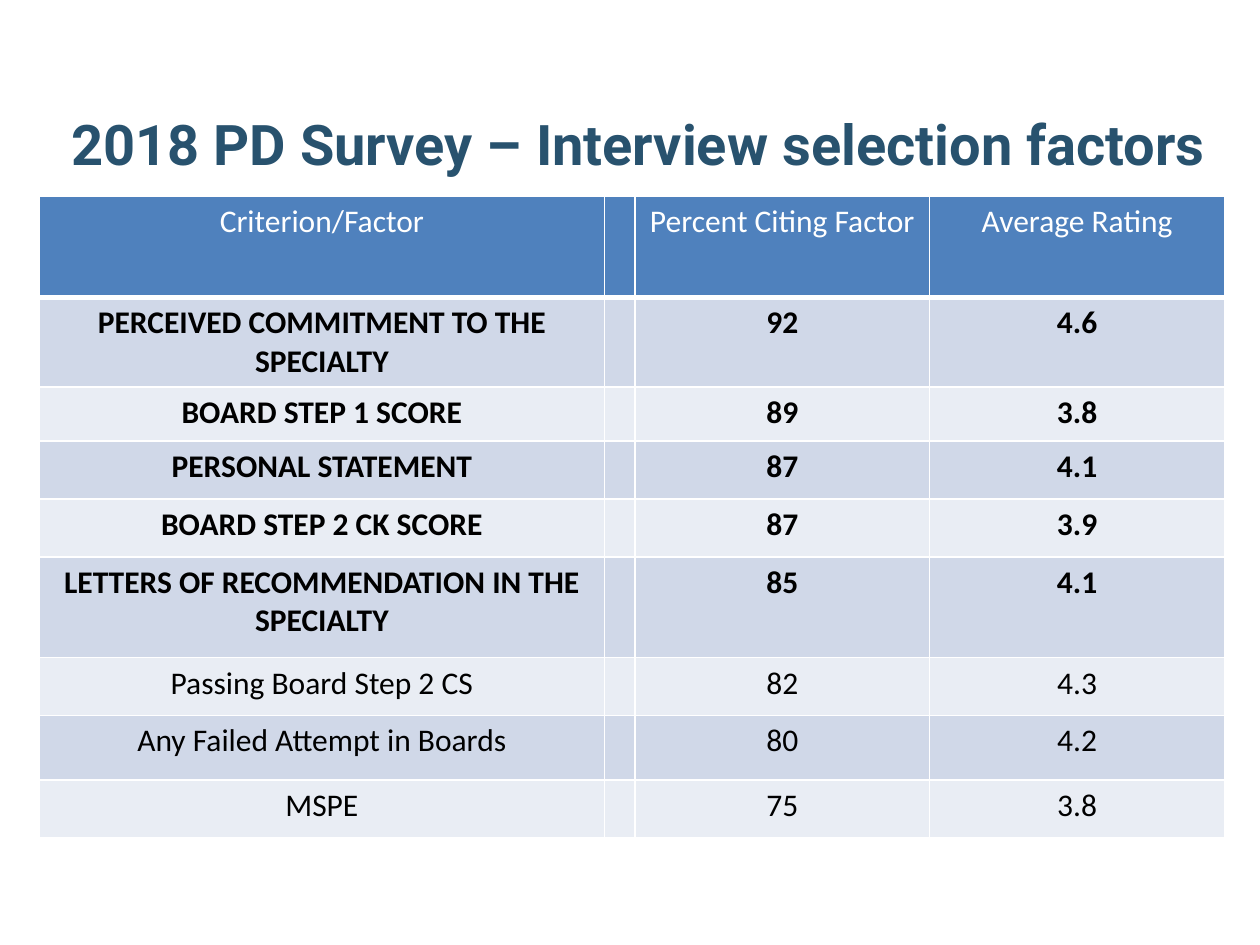
"""Build the slide of survey factors that decide interview selection."""
from dataclasses import dataclass

from lxml.etree import SubElement
from pptx import Presentation
from pptx.dml.color import RGBColor as Rgb
from pptx.enum.text import MSO_ANCHOR as Anchor, PP_ALIGN as Align
from pptx.oxml.ns import qn
from pptx.util import Inches, Pt


@dataclass(frozen=True)
class Theme:
    title_font: str = "Roboto"
    table_font: str = "Calibri"
    title_size: int = 32
    table_size: int = 18
    title_ink: str = "28526E"
    header_ink: str = "FFFFFF"
    body_ink: str = "000000"
    header_fill: str = "4F81BD"
    bands: tuple = ("D0D8E8", "E9EDF4")
    rule: str = "FFFFFF"


def style_text(paragraph, face, size, ink, bold):
    paragraph.alignment = Align.CENTER
    for run in paragraph.runs:
        run.font.name = face
        run.font.size = Pt(size)
        run.font.bold = bold
        run.font.color.rgb = Rgb.from_string(ink)


def rule_cell(cell, color, bottom_width):
    properties = cell._tc.get_or_add_tcPr()
    for side, width in (("L", 1), ("R", 1), ("T", 1), ("B", bottom_width)):
        line = SubElement(properties, qn(f"a:ln{side}"), w=str(Pt(width)))
        SubElement(SubElement(line, qn("a:solidFill")), qn("a:srgbClr"), val=color)


theme = Theme()
header = ("Criterion/Factor", "Percent Citing Factor", "Average Rating")
factors = [
    ("PERCEIVED COMMITMENT TO THE SPECIALTY", "92", "4.6"),
    ("BOARD STEP 1 SCORE", "89", "3.8"),
    ("PERSONAL STATEMENT", "87", "4.1"),
    ("BOARD STEP 2 CK SCORE", "87", "3.9"),
    ("LETTERS OF RECOMMENDATION IN THE SPECIALTY", "85", "4.1"),
    ("Passing Board Step 2 CS", "82", "4.3"),
    ("Any Failed Attempt in Boards", "80", "4.2"),
    ("MSPE", "75", "3.8"),
]
top_factors = 5
column_widths = (4.49, 0.23, 2.34, 2.34)
row_heights = (0.8, 0.71, 0.43, 0.46, 0.46, 0.8, 0.46, 0.51, 0.46)

deck = Presentation()
deck.slide_width, deck.slide_height = Inches(10), Inches(7.5)
slide = deck.slides.add_slide(deck.slide_layouts[5])

heading = slide.shapes.title
heading.left, heading.top = Inches(0.14), Inches(0.87)
heading.width, heading.height = Inches(9.86), Inches(0.53)
heading.text_frame.text = "2018 PD Survey – Interview selection factors"
heading.text_frame.vertical_anchor = Anchor.MIDDLE
style_text(heading.text_frame.paragraphs[0], theme.title_font, theme.title_size, theme.title_ink, True)

survey = slide.shapes.add_table(
    len(row_heights), len(column_widths), Inches(0.31), Inches(1.56),
    Inches(sum(column_widths)), Inches(sum(row_heights)),
).table
for column, width in zip(survey.columns, column_widths):
    column.width = Inches(width)
for row, height in zip(survey.rows, row_heights):
    row.height = Inches(height)

for rank, (criterion, percent, rating) in enumerate([header, *factors]):
    is_header = rank == 0
    fill = theme.header_fill if is_header else theme.bands[(rank - 1) % 2]
    ink = theme.header_ink if is_header else theme.body_ink
    for position, wording in enumerate((criterion, "", percent, rating)):
        cell = survey.cell(rank, position)
        rule_cell(cell, theme.rule, 3 if is_header else 1)
        cell.fill.solid()
        cell.fill.fore_color.rgb = Rgb.from_string(fill)
        if wording:
            cell.text_frame.text = wording
            style_text(cell.text_frame.paragraphs[0], theme.table_font, theme.table_size, ink,
                       1 <= rank <= top_factors)

deck.save("out.pptx")
